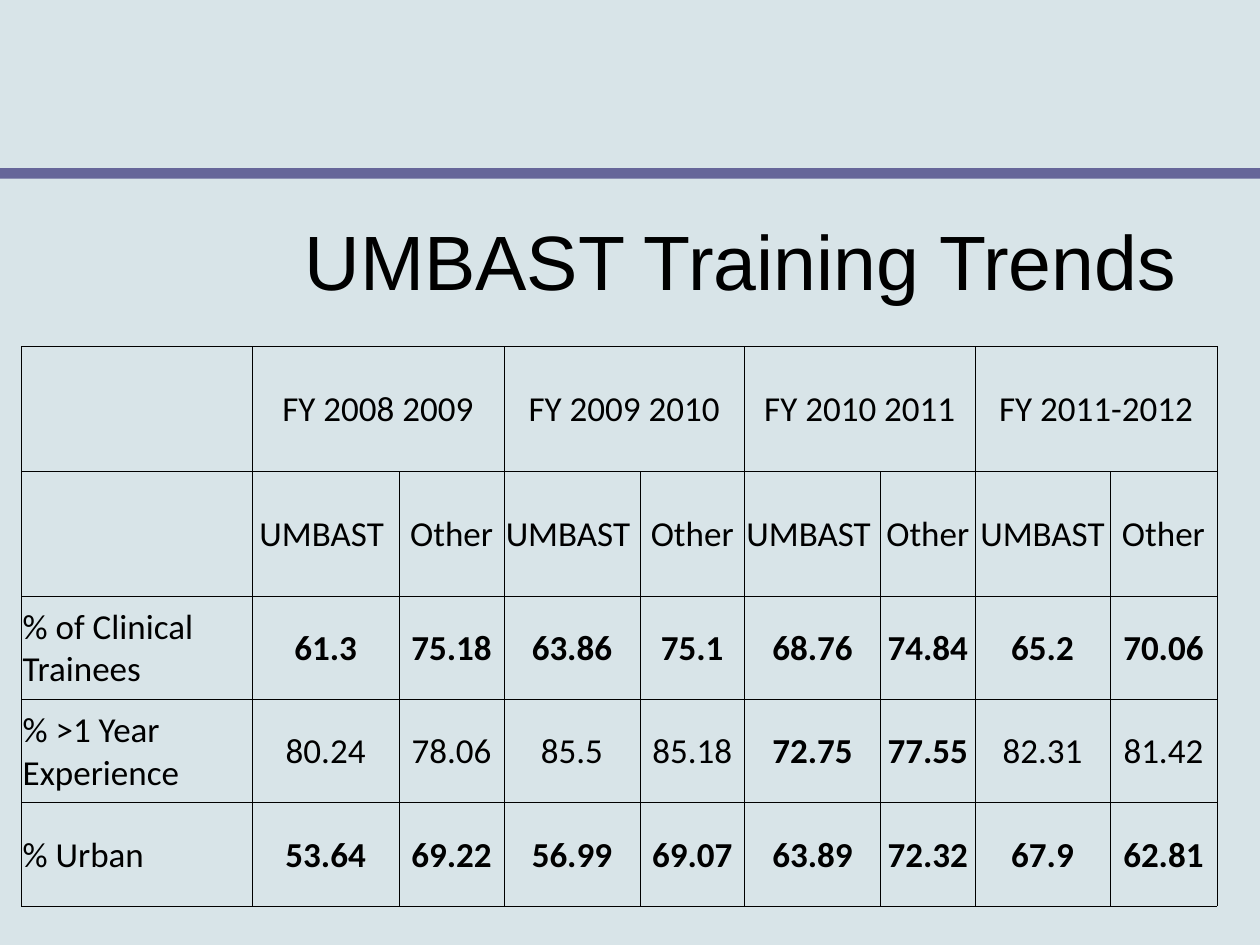
"""Build the UMBAST training trends slide."""
from dataclasses import dataclass
from lxml import etree
from pptx import Presentation
from pptx.dml.color import RGBColor
from pptx.enum.shapes import MSO_SHAPE
from pptx.enum.text import MSO_ANCHOR, PP_ALIGN
from pptx.oxml.ns import qn
from pptx.util import Inches, Pt

RECTANGLE = MSO_SHAPE.RECTANGLE
TOP, MIDDLE = MSO_ANCHOR.TOP, MSO_ANCHOR.MIDDLE
LEFT, CENTER = PP_ALIGN.LEFT, PP_ALIGN.CENTER

COLORS = {"background": "D8E4E8", "band": "666699", "ink": "000000"}
WIDTH, HEIGHT = Inches(10), Inches(7.5)
TITLE_ONLY = 5
COLUMNS = (1.83, 1.17, 0.83, 1.08, 0.83, 1.08, 0.75, 1.07, 0.85)
ROWS = (0.99, 0.99, 0.82, 0.82, 0.82)
YEARS = ("FY 2008 2009", "FY 2009 2010", "FY 2010 2011", "FY 2011-2012")
GROUPS = ("UMBAST ", "Other")


@dataclass(frozen=True)
class Area:
    """A rectangle given as shares of the slide's size."""
    left: float
    top: float
    width: float
    height: float

    def box(self) -> tuple:
        """Return left, top, width and height as lengths."""
        return (int(self.left * WIDTH), int(self.top * HEIGHT),
                int(self.width * WIDTH), int(self.height * HEIGHT))


@dataclass(frozen=True)
class Measure:
    """One table row: its label, its values and the columns set in bold."""
    label: str
    values: tuple
    bold: range


BAND = Area(0, 0.178, 1, 0.011)
TITLE = Area(0.192, 0.211, 0.792, 0.167)
TABLE = Area(0.017, 0.367, 0.95, 0.591)
MEASURES = (
    Measure("% of Clinical Trainees",
            ("61.3", "75.18", "63.86", "75.1", "68.76", "74.84", "65.2", "70.06"), range(1, 9)),
    Measure("% >1 Year Experience",
            ("80.24", "78.06", "85.5", "85.18", "72.75", "77.55", "82.31", "81.42"), range(5, 7)),
    Measure("% Urban",
            ("53.64", "69.22", "56.99", "69.07", "63.89", "72.32", "67.9", "62.81"), range(1, 9)),
)


def color(name: str) -> RGBColor:
    """Look up a named colour."""
    return RGBColor.from_string(COLORS[name])


def write(frame, text: str, font: str, size: int, align, bold: bool = False) -> None:
    """Put one formatted run in the frame's first paragraph."""
    para = frame.paragraphs[0]
    para.alignment = align
    span = para.add_run()
    span.text = text
    span.font.name, span.font.size, span.font.bold = font, Pt(size), bold
    span.font.color.rgb = color("ink")


def add_band(page) -> None:
    """Draw the full-width band above the title."""
    band = page.shapes.add_shape(RECTANGLE, *BAND.box())
    band.shadow.inherit = False
    band.fill.solid()
    band.fill.fore_color.rgb = color("band")
    band.line.fill.background()


def add_title(page, text: str) -> None:
    """Place and fill the title placeholder."""
    title = page.shapes.title
    title.left, title.top, title.width, title.height = TITLE.box()
    frame = title.text_frame
    frame.word_wrap = True
    frame.vertical_anchor = TOP
    frame.margin_top = Inches(0.11)
    write(frame, text, "Arial", 44, CENTER)


def format_cell(cell) -> None:
    """Give a cell thin borders, no fill and tight margins."""
    properties = cell._tc.get_or_add_tcPr()
    for side in ("a:lnL", "a:lnR", "a:lnT", "a:lnB"):
        border = etree.SubElement(properties, qn(side), w=str(Pt(0.5)))
        fill = etree.SubElement(border, qn("a:solidFill"))
        etree.SubElement(fill, qn("a:srgbClr"), val=COLORS["ink"])
    cell.fill.background()
    cell.vertical_anchor = MIDDLE
    cell.margin_left = cell.margin_right = cell.margin_top = Inches(0.01)
    cell.margin_bottom = 0


def fill_cell(cell, text: str, align=CENTER, bold: bool = False) -> None:
    """Write a table entry."""
    write(cell.text_frame, text, "Calibri", 20, align, bold)


def add_trends(page) -> None:
    """Build the table of trends by fiscal year."""
    table = page.shapes.add_table(len(ROWS), len(COLUMNS), *TABLE.box()).table
    table.first_row = table.horz_banding = False
    for column, width in zip(table.columns, COLUMNS):
        column.width = Inches(width)
    for row, height in zip(table.rows, ROWS):
        row.height = Inches(height)
        for cell in row.cells:
            format_cell(cell)
    for index, year in enumerate(YEARS):
        first = 1 + index * len(GROUPS)
        table.cell(0, first).merge(table.cell(0, first + 1))
        fill_cell(table.cell(0, first), year)
        for offset, group in enumerate(GROUPS):
            fill_cell(table.cell(1, first + offset), group)
    for row, measure in enumerate(MEASURES, 2):
        fill_cell(table.cell(row, 0), measure.label, LEFT)
        for column, value in enumerate(measure.values, 1):
            fill_cell(table.cell(row, column), value, bold=column in measure.bold)


def main() -> None:
    """Assemble and save the deck."""
    deck = Presentation()
    deck.slide_width, deck.slide_height = WIDTH, HEIGHT
    page = deck.slides.add_slide(deck.slide_layouts[TITLE_ONLY])
    page.background.fill.solid()
    page.background.fill.fore_color.rgb = color("background")
    add_band(page)
    add_title(page, "UMBAST Training Trends")
    add_trends(page)
    deck.save("out.pptx")


if __name__ == "__main__":
    main()
